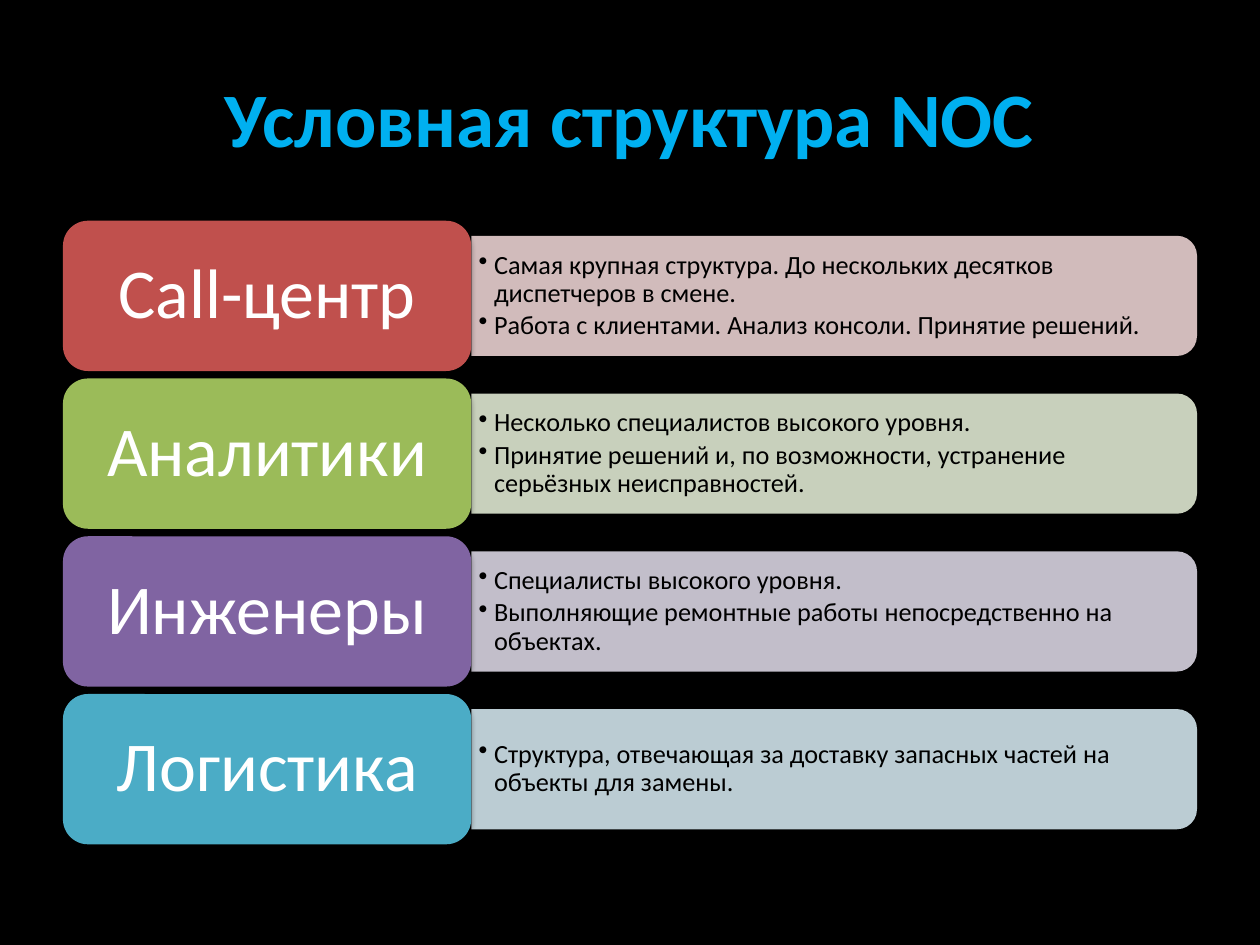
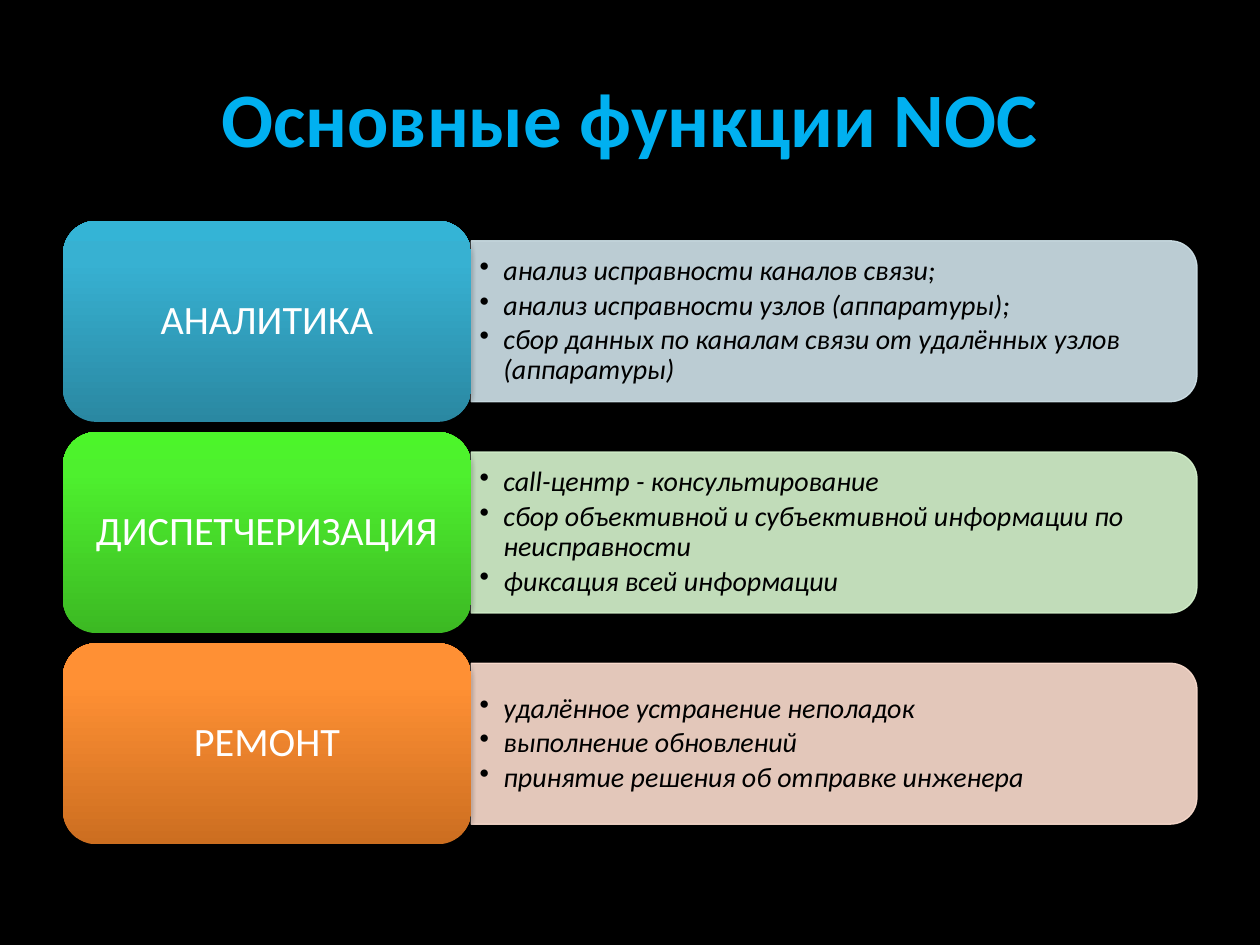
from dataclasses import dataclass

from lxml import etree
from pptx import Presentation
from pptx import util as u
from pptx.dml import color
from pptx.enum import shapes, text
from pptx.oxml import ns


# Colours, type sizes and the shared grid (lengths in cm)
@dataclass(frozen=True)
class Theme:
    font: str = "Calibri"
    background: str = "000000"
    title: str = "00B0F0"
    label_text: str = "FFFFFF"
    list_text: str = "000000"
    shadow: str = "000000"
    title_size: int = 44
    left: float = 1.27
    top: float = 4.45
    height: float = 12.57
    label_width: float = 8.23
    panel_width: float = 14.63
    gap_ratio: float = 0.05
    panel_ratio: float = 0.8


# What differs between the two diagrams
@dataclass(frozen=True)
class RowStyle:
    label_size: int
    list_size: int
    indent: float
    list_inset: float
    label_inset: float
    italic: bool = False
    panel_edge: bool = False


FLAT = RowStyle(label_size=40, list_size=15, indent=0.31, list_inset=0.15, label_inset=0.58)
GLOSSY = RowStyle(label_size=23, list_size=16, indent=0.48, list_inset=0.17, label_inset=0.46,
                  italic=True, panel_edge=True)


def rgb(value):
    return color.RGBColor.from_string(value)


def add_xml(parent, tag, **attributes):
    return etree.SubElement(parent, ns.qn(tag), {k: str(v) for k, v in attributes.items()})


def set_alpha(fill_parent, percent):
    """Make the solid fill below an element partly transparent."""
    value = fill_parent.find(ns.qn("a:solidFill"))[0]
    add_xml(value, "a:alpha", val=percent * 1000)


def write(para, words, *, font, size, ink, bold=False, italic=False, align=None,
          line_spacing=None, space_after=None, bullet_indent=None):
    para.alignment = align
    para.line_spacing = line_spacing
    para.space_after = space_after
    if bullet_indent is not None:
        properties = para._p.get_or_add_pPr()
        properties.set("marL", str(u.Cm(bullet_indent)))
        properties.set("indent", str(-u.Cm(bullet_indent)))
        add_xml(properties, "a:buChar", char="•")
    span = para.add_run()
    span.text = words
    span.font.name = font
    span.font.size = u.Pt(size)
    span.font.bold = bold
    span.font.italic = italic
    span.font.color.rgb = rgb(ink)


class DiagramDeck:
    def __init__(self, theme):
        self.theme = theme
        self.deck = Presentation()
        self.deck.slide_width, self.deck.slide_height = u.Cm(25.4), u.Cm(19.05)
        fill = self.deck.slide_master.background.fill
        fill.solid()
        fill.fore_color.rgb = rgb(theme.background)
        self.page = None

    def add_page(self, title):
        theme = self.theme
        self.page = self.deck.slides.add_slide(self.deck.slide_layouts[5])
        box = self.page.shapes.title
        box.left, box.top = u.Cm(1.27), u.Cm(0.76)
        box.width, box.height = u.Cm(22.86), u.Cm(3.18)
        box.text_frame.vertical_anchor = text.MSO_ANCHOR.MIDDLE
        write(box.text_frame.paragraphs[0], title, font=theme.font, size=theme.title_size,
              ink=theme.title, bold=True, align=text.PP_ALIGN.CENTER)

    def add_block(self, preset, left, top, width, height):
        block = self.page.shapes.add_shape(preset, u.Cm(left), u.Cm(top), u.Cm(width), u.Cm(height))
        block.shadow.inherit = False
        block.line.fill.background()
        return block

    def add_shadow(self, block):
        effects = block._element.spPr.find(ns.qn("a:effectLst"))
        outer = add_xml(effects, "a:outerShdw", blurRad=u.Pt(3.1), dist=u.Pt(1.8),
                        dir=5400000, rotWithShape=0)
        add_xml(add_xml(outer, "a:srgbClr", val=self.theme.shadow), "a:alpha", val=35000)

    def paint(self, block, paint):
        """Fill with one colour, or with a gradient running from bottom to top."""
        if isinstance(paint, str):
            block.fill.solid()
            block.fill.fore_color.rgb = rgb(paint)
            return
        block.fill.gradient()
        block.fill.gradient_angle = 90
        stops = block._element.spPr.find(".//" + ns.qn("a:gsLst"))
        for stop in list(stops):
            stops.remove(stop)
        for position, value in zip((0, 80, 100), paint):
            add_xml(add_xml(stops, "a:gs", pos=position * 1000), "a:srgbClr", val=value)

    def set_frame(self, frame, inset_x, inset_y):
        frame.word_wrap = True
        frame.vertical_anchor = text.MSO_ANCHOR.MIDDLE
        frame.margin_left = frame.margin_right = u.Cm(inset_x)
        frame.margin_top = frame.margin_bottom = u.Cm(inset_y)

    def add_panel(self, left, top, width, height, tint, style):
        # The shape stands upright and is turned a quarter about its centre
        panel = self.add_block(shapes.MSO_SHAPE.ROUND_2_SAME_RECTANGLE,
                               left + (width - height) / 2, top + (height - width) / 2,
                               height, width)
        panel.rotation = 90
        self.paint(panel, tint)
        set_alpha(panel._element.spPr, 90)
        if style.panel_edge:
            panel.line.color.rgb = rgb(tint)
            panel.line.width = u.Pt(0.75)
            set_alpha(panel._element.spPr.find(ns.qn("a:ln")), 90)
            self.add_shadow(panel)

    def add_list(self, left, top, width, height, items, style):
        box = self.page.shapes.add_textbox(u.Cm(left), u.Cm(top), u.Cm(width), u.Cm(height))
        frame = box.text_frame
        self.set_frame(frame, style.list_inset, 0.08)
        for index, item in enumerate(items):
            para = frame.add_paragraph() if index else frame.paragraphs[0]
            write(para, item, font=self.theme.font, size=style.list_size,
                  ink=self.theme.list_text, italic=style.italic, line_spacing=0.9,
                  space_after=u.Pt(0.15 * style.list_size), bullet_indent=style.indent)

    def add_label(self, left, top, width, height, words, paint, style):
        label = self.add_block(shapes.MSO_SHAPE.ROUNDED_RECTANGLE, left, top, width, height)
        self.paint(label, paint)
        self.add_shadow(label)
        self.set_frame(label.text_frame, style.label_inset, 0.3)
        write(label.text_frame.paragraphs[0], words, font=self.theme.font,
              size=style.label_size, ink=self.theme.label_text,
              align=text.PP_ALIGN.CENTER, line_spacing=0.9)

    def add_rows(self, rows, style):
        theme = self.theme
        count = len(rows)
        label_height = theme.height / (count + (count - 1) * theme.gap_ratio)
        panel_height = label_height * theme.panel_ratio
        panel_left = theme.left + theme.label_width
        for index, (name, paint, tint, items) in enumerate(rows):
            top = theme.top + index * label_height * (1 + theme.gap_ratio)
            panel_top = top + (label_height - panel_height) / 2
            self.add_panel(panel_left, panel_top, theme.panel_width, panel_height, tint, style)
            self.add_list(panel_left, panel_top, theme.panel_width - 0.14, panel_height,
                          items, style)
            self.add_label(theme.left, top, theme.label_width, label_height, name, paint, style)


# Rows: label, label paint, panel tint, list
STRUCTURE = [
    ("Call-центр", "C0504D", "E8D0D0",
     ["Самая крупная структура. До нескольких десятков диспетчеров в смене.",
      "Работа с клиентами. Анализ консоли. Принятие решений."]),
    ("Аналитики", "9BBB59", "DEE7D1",
     ["Несколько специалистов высокого уровня.",
      "Принятие решений и, по возможности, устранение серьёзных неисправностей."]),
    ("Инженеры", "8064A2", "D8D3E0",
     ["Специалисты высокого уровня.",
      "Выполняющие ремонтные работы непосредственно на объектах."]),
    ("Логистика", "4BACC6", "D0E3EA",
     ["Структура, отвечающая за доставку запасных частей на объекты для замены."]),
]
FUNCTIONS = [
    ("АНАЛИТИКА", ("2A88A2", "37B1D2", "34B4D6"), "D0E3EA",
     ["анализ исправности каналов связи;",
      "анализ исправности узлов (аппаратуры);",
      "сбор данных по каналам связи от удалённых узлов (аппаратуры)"]),
    ("ДИСПЕТЧЕРИЗАЦИЯ", ("3CB923", "4EF02E", "4CF52A"), "D6F4CE",
     ["call-центр - консультирование",
      "сбор объективной и субъективной информации по неисправности",
      "фиксация всей информации"]),
    ("РЕМОНТ", ("CC6E20", "FF9034", "FF9136"), "FCDDCF",
     ["удалённое устранение неполадок",
      "выполнение обновлений",
      "принятие решения об отправке инженера"]),
]


def main():
    show = DiagramDeck(Theme())
    show.add_page("Условная структура NOC")
    show.add_rows(STRUCTURE, FLAT)
    show.add_page("Основные функции NOC")
    show.add_rows(FUNCTIONS, GLOSSY)
    show.deck.save("out.pptx")


if __name__ == "__main__":
    main()
